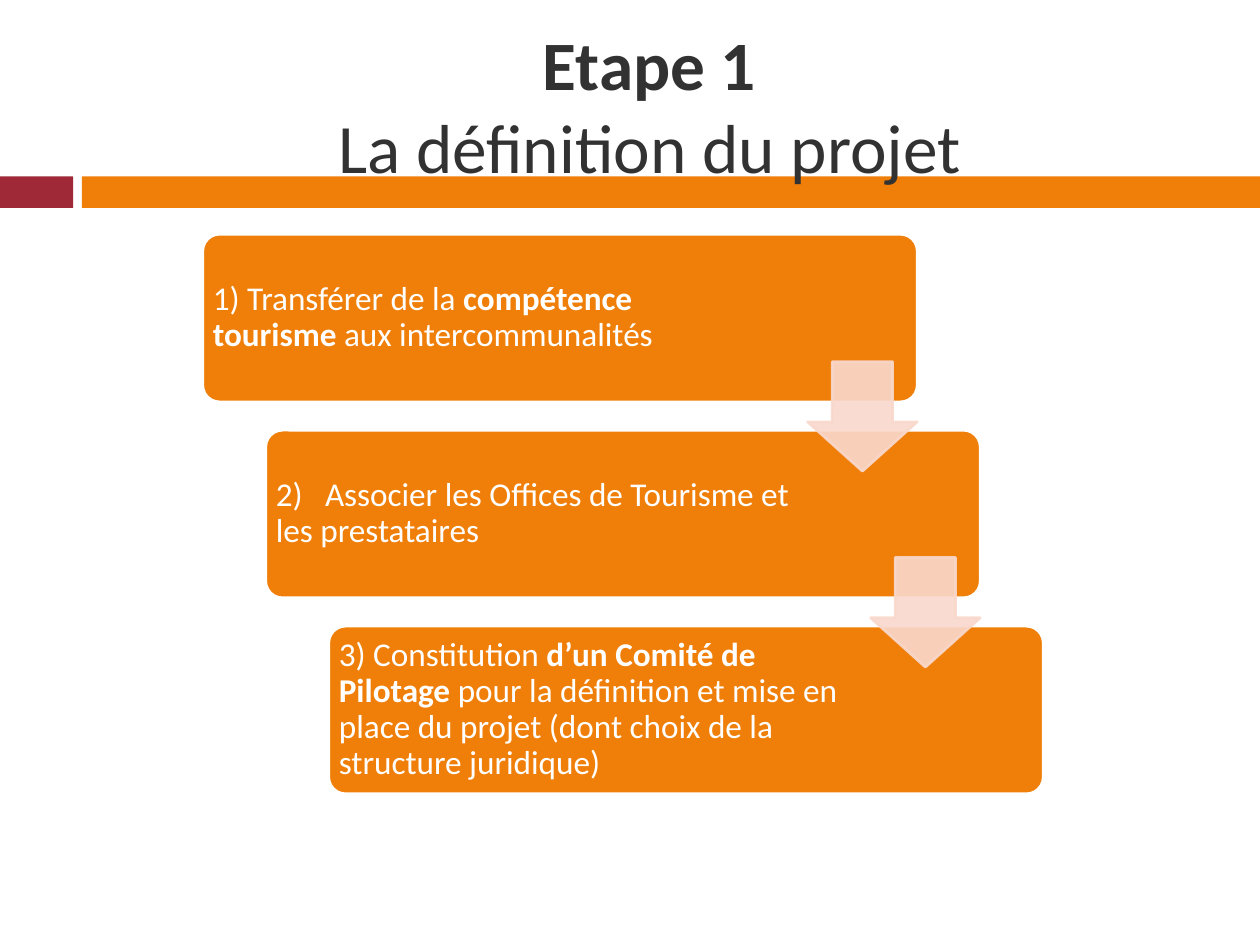
from dataclasses import dataclass

from lxml.etree import SubElement
from pptx import Presentation
from pptx.dml.color import RGBColor
from pptx.enum.shapes import MSO_SHAPE
from pptx.enum.text import MSO_ANCHOR, PP_ALIGN
from pptx.oxml.ns import qn
from pptx.util import Inches, Pt


@dataclass(frozen=True)
class Theme:
    font: str = "Calibri"
    red: RGBColor = RGBColor(0x9F, 0x29, 0x36)
    orange: RGBColor = RGBColor(0xF0, 0x7F, 0x09)
    pink: RGBColor = RGBColor(0xF9, 0xD8, 0xCC)
    dark: RGBColor = RGBColor(0x32, 0x32, 0x32)
    white: RGBColor = RGBColor(0xFF, 0xFF, 0xFF)
    title: Pt = Pt(39.6)
    body: Pt = Pt(19)
    edge: Pt = Pt(1.5)


theme = Theme()
deck = Presentation()
deck.slide_width, deck.slide_height = Inches(10), Inches(7.5)
slide = deck.slides.add_slide(deck.slide_layouts[6])


def add_form(kind, box, fill, line=None, adjust=()):
    form = slide.shapes.add_shape(kind, *map(Inches, box))
    form.shadow.inherit = False
    form.fill.solid()
    form.fill.fore_color.rgb = fill
    if line is None:
        form.line.fill.background()
    else:
        form.line.color.rgb = line
        form.line.width = theme.edge
    for index, value in enumerate(adjust):
        form.adjustments[index] = value
    return form


def add_text(box, lines, size, color, inset, format, tab=None):
    """Fill one paragraph with lines of (text, bold) runs."""
    frame = slide.shapes.add_textbox(*map(Inches, box)).text_frame
    frame.word_wrap = True
    frame.vertical_anchor = MSO_ANCHOR.MIDDLE
    for side in ("left", "top", "right", "bottom"):
        setattr(frame, f"margin_{side}", Inches(inset))
    para = frame.paragraphs[0]
    for name, value in format.items():
        setattr(para, name, value)
    if tab:
        stops = SubElement(para._p.get_or_add_pPr(), qn("a:tabLst"))
        SubElement(stops, qn("a:tab"), pos=str(Inches(tab)), algn="l")
    font = {"name": theme.font, "size": size}
    for number, runs in enumerate(lines):
        if number:
            para.add_line_break()
        for text, bold in runs:
            run = para.add_run()
            run.text = text
            for name, value in {**font, "bold": bold}.items():
                setattr(run.font, name, value)
            run.font.color.rgb = color


# Header band and title
for left, width, color in ((0, 0.58, theme.red), (0.65, 9.35, theme.orange)):
    add_form(MSO_SHAPE.RECTANGLE, (left, 1.4, width, 0.25), color)

add_text((1.06, 0.29, 8.19, 1.08),
         [[("Etape 1", True)], [("La définition du projet", False)]],
         theme.title, theme.dark, 0.05, {"alignment": PP_ALIGN.CENTER})

# Staircase of steps
steps = [
    [("1) Transférer de la ", False), ("compétence tourisme ", True),
     ("aux intercommunalités", False)],
    [("2)\tAssocier les Offices de Tourisme et les prestataires", False)],
    [("3) Constitution ", False), ("d’un Comité de Pilotage", True),
     (" pour la définition et mise en place du projet "
      "(dont choix de la structure juridique)", False)],
]
left, top, width, height = 1.61, 1.86, 5.67, 1.33
right, down = 0.5, 1.555
body = {"alignment": PP_ALIGN.LEFT, "line_spacing": 0.9}

for index, runs in enumerate(steps):
    x, y = left + index * right, top + index * down
    add_form(MSO_SHAPE.ROUNDED_RECTANGLE, (x, y, width, height),
             theme.orange, theme.white, [0.1])
    add_text((x, y, 4.3, height), [runs], theme.body, theme.white, 0.08,
             body, tab=0.39 if "\t" in runs[0][0] else None)

# Arrows leading to the next step
size = 0.87
for index in range(len(steps) - 1):
    x = left + index * right + width - size
    y = top + index * down + 1.01
    arrow = add_form(MSO_SHAPE.DOWN_ARROW, (x, y, size, size),
                     theme.pink, theme.pink, [0.55, 0.45])
    for shade in arrow._element.spPr.iter(qn("a:srgbClr")):
        SubElement(shade, qn("a:alpha"), val="90000")

deck.save("out.pptx")
